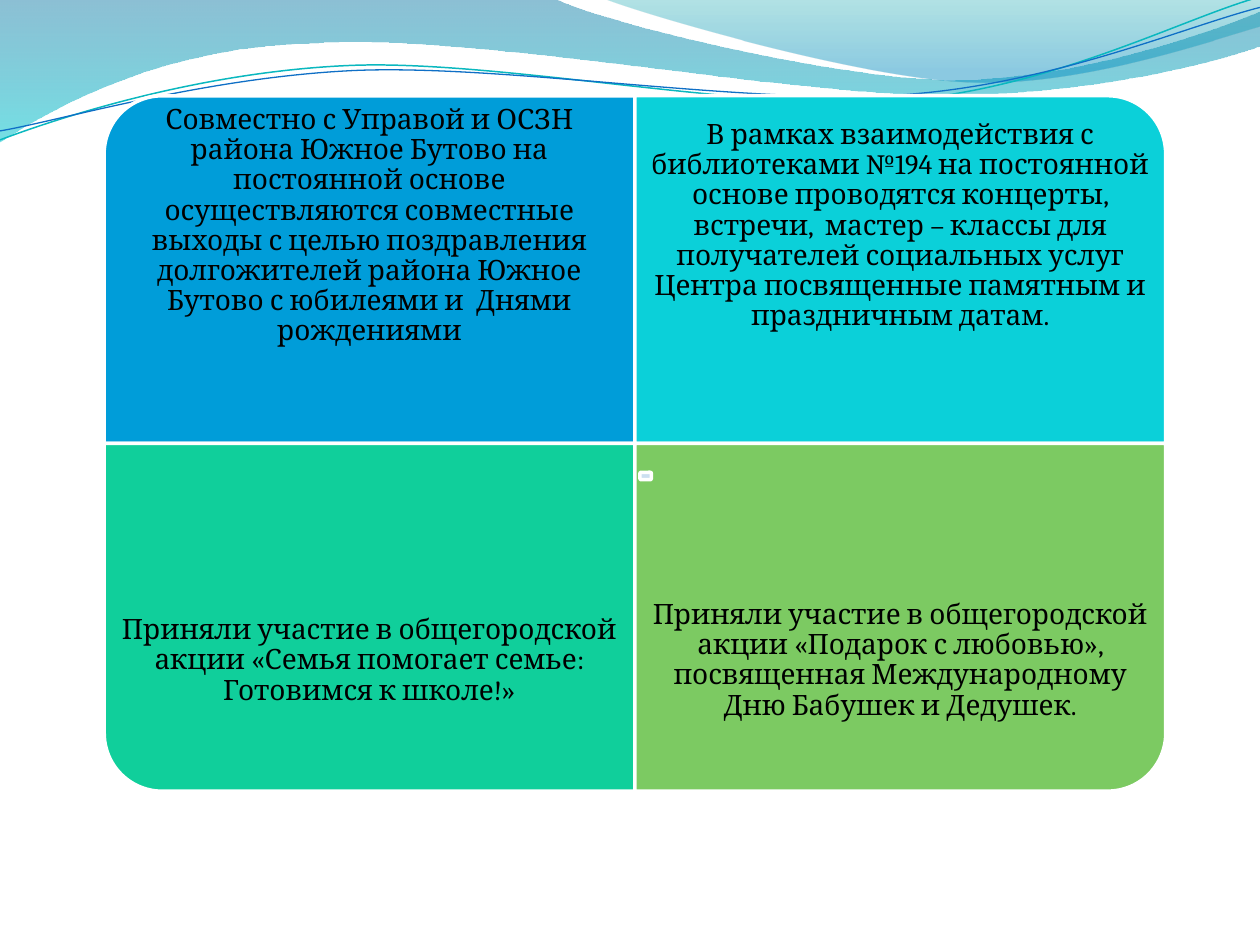
import math

import pptx
import pptx.dml.color
import pptx.enum.shapes
import pptx.enum.text
import pptx.util
from lxml import etree
from pptx.oxml.ns import qn

Cm, Pt = pptx.util.Cm, pptx.util.Pt
RGBColor = pptx.dml.color.RGBColor
MSO_SHAPE = pptx.enum.shapes.MSO_SHAPE

WHITE = RGBColor(0xFF, 0xFF, 0xFF)
BLACK = RGBColor(0x00, 0x00, 0x00)
PILL = RGBColor(0xCC, 0xDF, 0xF1)

# Column, row, quarter turns of the rounded corner, fill, text
TILES = [
    (0, 0, 3, RGBColor(0x00, 0x9D, 0xD9),
     "Совместно с Управой и ОСЗН района Южное Бутово на постоянной основе "
     "осуществляются совместные выходы с целью поздравления долгожителей "
     "района Южное Бутово с юбилеями и  Днями рождениями"),
    (1, 0, 0, RGBColor(0x0B, 0xD0, 0xD9),
     "В рамках взаимодействия с библиотеками №194 на постоянной основе "
     "проводятся концерты, встречи,  мастер – классы для получателей "
     "социальных услуг Центра посвященные памятным и праздничным датам."),
    (0, 1, 2, RGBColor(0x10, 0xCF, 0x9B),
     "Приняли участие в общегородской акции «Семья помогает семье: "
     "Готовимся к школе!»"),
    (1, 1, 1, RGBColor(0x7C, 0xCA, 0x62),
     "Приняли участие в общегородской акции «Подарок с любовью», "
     "посвященная Международному Дню Бабушек и Дедушек."),
]

# Outlines in cm: a pair is a straight step, six numbers are a Bezier curve.
# Gradient stops: position, colour, opacity in percent
WAVES = [
    ([(0, 0), (11.18, -0.03), (12.09, 0.43, 16.87, 1.6, 19.25, 1.6),
      (21.67, 1.6, 24.33, 0.66, 25.4, 0.23), (25.43, 0.91),
      (24.97, 1.12, 22.1, 1.93, 18.95, 1.91),
      (15.8, 1.91, 9.7, 0.71, 6.53, 0.86),
      (3.28, 0.91, 1.17, 2.11, -0.03, 2.87)],
     [(0, RGBColor(0x00, 0x74, 0xA1), 45), (1, RGBColor(0x00, 0xC6, 0xCF), 55)]),
    ([(12.17, -0.03), (12.93, 0.28, 17.32, 1.57, 19.53, 1.65),
      (21.74, 1.75, 24.41, 0.81, 25.4, 0.53), (25.4, 0)],
     [(0, RGBColor(0x00, 0xA1, 0xA9), 30), (0.8, RGBColor(0x00, 0x8B, 0xBF), 45)]),
]
# Outline as it lies on the slide, centre of its turn, colour, width in points
WAVE_LINES = [
    ([(0, 2.82), (1.22, 2.36, 4.01, 1.45, 7.04, 1.32),
      (10.03, 1.19, 15.06, 2.26, 18.11, 2.03),
      (21.16, 1.8, 23.83, 0.38, 25.35, -0.05)],
     (12.67, 1.46), RGBColor(0x0A, 0xB8, 0xBF), 0.85),
    ([(0, 2.64), (1.19, 2.44, 4.17, 1.55, 7.19, 1.42),
      (10.24, 1.3, 15.16, 2.13, 18.21, 1.91),
      (21.23, 1.7, 23.9, 0.53, 25.4, 0.15)],
     (12.69, 1.5), RGBColor(0x0F, 0x6F, 0xC6), 0.75),
]

LINE_TILT = 2.7
GRID_LEFT, GRID_TOP = 2.1, 1.93
TILE_W, TILE_H = 10.7, 7.01
TEXT_H = TILE_H * 0.75

TEXT_FRAME = {
    "word_wrap": True,
    "vertical_anchor": pptx.enum.text.MSO_ANCHOR.MIDDLE,
    **{f"margin_{side}": Cm(0.3) for side in ("left", "top", "right", "bottom")},
}
PARAGRAPH = {"alignment": pptx.enum.text.PP_ALIGN.CENTER, "line_spacing": 0.9}
FONT = {"name": "Cambria", "size": Pt(16)}


def apply(target, values):
    for name, value in values.items():
        setattr(target, name, value)


def turn(outline, centre, degrees):
    """Turn every point of an outline clockwise around a centre."""
    cos, sin = math.cos(math.radians(degrees)), math.sin(math.radians(degrees))
    turned = []
    for step in outline:
        coordinates = []
        for x, y in zip(step[::2], step[1::2]):
            dx, dy = x - centre[0], y - centre[1]
            coordinates += [centre[0] + dx * cos - dy * sin,
                            centre[1] + dx * sin + dy * cos]
        turned.append(tuple(coordinates))
    return turned


def add_outline(slide, outline, closed):
    """Draw an outline, making one curve of each three points of a Bezier step."""
    points = [(Cm(x), Cm(y)) for step in outline
              for x, y in zip(step[::2], step[1::2])]
    builder = slide.shapes.build_freeform(*points[0])
    builder.add_line_segments(points[1:], close=closed)
    shape = builder.convert_to_shape()
    shape.shadow.inherit = False
    segments = shape.element.spPr.iter(qn("a:lnTo"))
    segments = iter(list(segments))
    for step in outline[1:]:
        first, *others = [next(segments) for _ in step[::2]]
        if others:
            first.tag = qn("a:cubicBezTo")
        for other in others:
            first.append(other[0])
            other.getparent().remove(other)
    return shape


def add_wave(slide, outline, stops):
    wave = add_outline(slide, outline, True)
    wave.line.fill.background()
    wave.fill.gradient()
    wave.fill.gradient_angle = 270
    for stop, (position, colour, opacity) in zip(wave.fill.gradient_stops, stops):
        stop.position = position
        stop.color.rgb = colour
    for colour, stop in zip(wave.element.spPr.iter(qn("a:srgbClr")), stops):
        etree.SubElement(colour, qn("a:alpha"), val=str(stop[2] * 1000))


def add_wave_line(slide, outline, centre, colour, width):
    wave_line = add_outline(slide, turn(outline, centre, LINE_TILT), False)
    wave_line.rotation = 360 - LINE_TILT
    wave_line.fill.background()
    wave_line.line.color.rgb = colour
    wave_line.line.width = Pt(width)


def add_block(slide, preset, left, top, width, height, colour):
    block = slide.shapes.add_shape(preset, Cm(left), Cm(top), Cm(width), Cm(height))
    block.shadow.inherit = False
    block.fill.solid()
    block.fill.fore_color.rgb = colour
    block.line.color.rgb = WHITE
    block.line.width = Pt(2)
    return block


def add_tile(slide, column, row, turns, colour, text):
    left, top = GRID_LEFT + column * TILE_W, GRID_TOP + row * TILE_H
    # A quarter turn swaps the sides around the same centre
    width, height = (TILE_H, TILE_W) if turns % 2 else (TILE_W, TILE_H)
    tile = add_block(slide, MSO_SHAPE.ROUND_1_RECTANGLE,
                     left + (TILE_W - width) / 2, top + (TILE_H - height) / 2,
                     width, height, colour)
    tile.rotation = turns * 90

    text_top = top + row * (TILE_H - TEXT_H)
    caption = slide.shapes.add_textbox(Cm(left), Cm(text_top), Cm(TILE_W), Cm(TEXT_H))
    apply(caption.text_frame, TEXT_FRAME)
    paragraph = caption.text_frame.paragraphs[0]
    apply(paragraph, PARAGRAPH)
    run = paragraph.add_run()
    run.text = text
    apply(run.font, FONT)
    run.font.color.rgb = BLACK


def main():
    deck = pptx.Presentation()
    deck.slide_width, deck.slide_height = Cm(25.4), Cm(19.05)
    slide = deck.slides.add_slide(deck.slide_layouts[6])
    for wave in WAVES:
        add_wave(slide, *wave)
    for wave_line in WAVE_LINES:
        add_wave_line(slide, *wave_line)
    for tile in TILES:
        add_tile(slide, *tile)
    pill = add_block(slide, MSO_SHAPE.ROUNDED_RECTANGLE, 12.9, 9.52, 0.23, 0.15, PILL)
    pill.rotation = 180
    deck.save("out.pptx")


if __name__ == "__main__":
    main()
